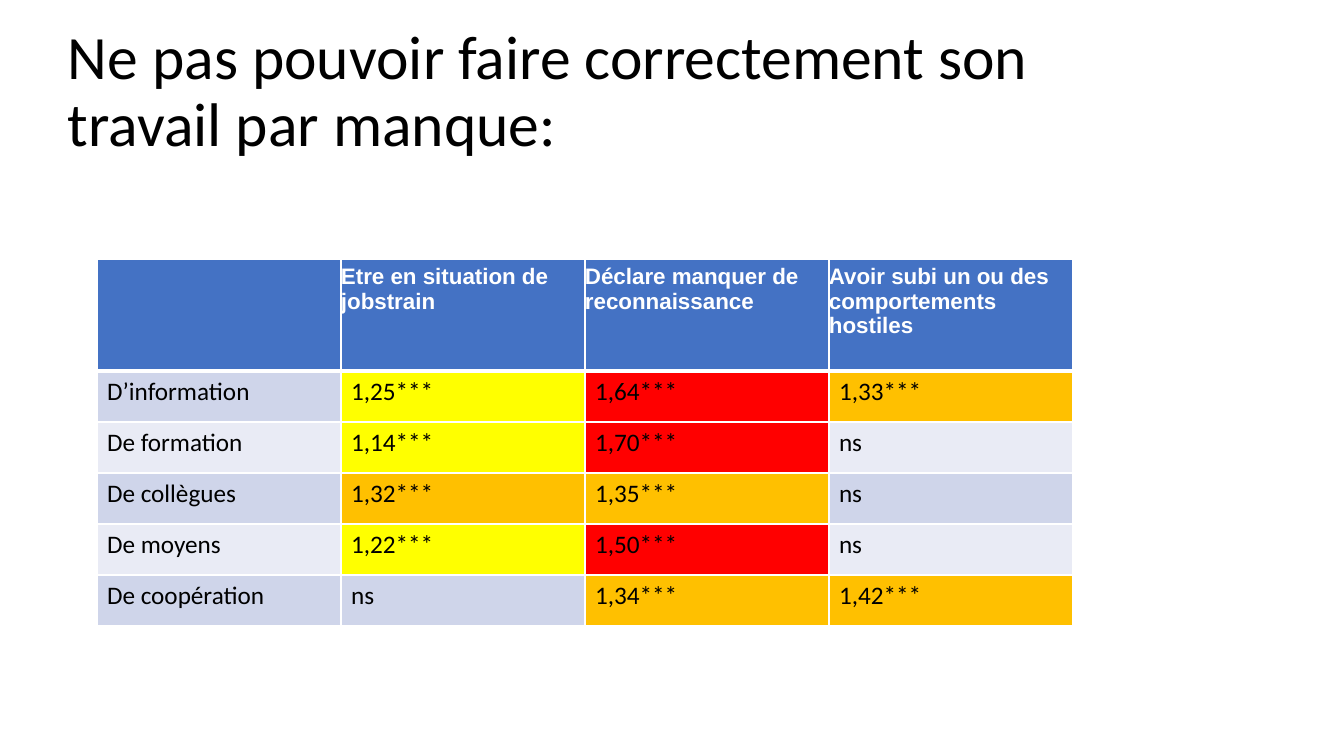
from lxml.etree import SubElement
from pptx import Presentation
from pptx.dml.color import RGBColor
from pptx.enum.text import MSO_ANCHOR
from pptx.oxml.ns import qn
from pptx.util import Emu, Pt

COLORS = {
    "head": "4472C4", "odd": "CFD5EA", "even": "E9EBF5",
    "low": "FFFF00", "mid": "FFC000", "high": "FF0000",
    "white": "FFFFFF", "black": "000000",
}
TITLE = "Ne pas pouvoir faire correctement son travail par manque:"
ROWS = [
    ["", "Etre en situation de jobstrain", "Déclare manquer de reconnaissance",
     "Avoir subi un ou des comportements hostiles"],
    ["D’information", "1,25***", "1,64***", "1,33***"],
    ["De formation", "1,14***", "1,70***", "ns"],
    ["De collègues", "1,32***", "1,35***", "ns"],
    ["De moyens", "1,22***", "1,50***", "ns"],
    ["De coopération", "ns", "1,34***", "1,42***"],
]
COL, HEAD, BODY = 244, 112, 51


def px(size):
    """Turn pixels into EMU."""
    return Emu(round(size * 12192000 / 1344))


def paint(name):
    """Return the named colour."""
    return RGBColor.from_string(COLORS[name])


def style(para, face, size, color, bold=False):
    """Set the font of a paragraph."""
    font = para.font
    font.name, font.size, font.bold = face, Pt(size), bold
    font.color.rgb = paint(color)


def add_title(slide, text):
    """Add the slide title."""
    box = slide.shapes.add_textbox(px(68), px(26), px(1013), px(134))
    frame = box.text_frame
    frame.word_wrap = True
    frame.vertical_anchor = MSO_ANCHOR.MIDDLE
    frame.margin_left = frame.margin_right = 0
    frame.margin_top = frame.margin_bottom = 0
    para = frame.paragraphs[0]
    para.text = text
    para.line_spacing = 0.9
    style(para, "Calibri", 44, "black")


def edge(cell, side, width):
    """Draw one white border of a cell."""
    props = cell._tc.get_or_add_tcPr()
    line = SubElement(props, qn("a:ln" + side), w=str(Pt(width)))
    fill = SubElement(line, qn("a:solidFill"))
    SubElement(fill, qn("a:srgbClr"), val=COLORS["white"])


def shade(text, row):
    """Pick a fill name from the ratio, or from the row band."""
    if row == 0:
        return "head"
    if not text.endswith("***"):
        return "odd" if row % 2 else "even"
    ratio = float(text.rstrip("*").replace(",", "."))
    return "low" if ratio < 1.3 else "mid" if ratio < 1.5 else "high"


def fill_cell(cell, text, row):
    """Write and style one cell."""
    widths = {"L": 1, "R": 1, "T": 3 if row == 1 else 1, "B": 3 if row == 0 else 1}
    for side, width in widths.items():
        edge(cell, side, width)
    cell.fill.solid()
    cell.fill.fore_color.rgb = paint(shade(text, row))
    cell.text = text
    para = cell.text_frame.paragraphs[0]
    if row == 0:
        cell.margin_left = cell.margin_right = 0
        style(para, "Arial", 16, "white", True)
    else:
        style(para, "Calibri", 18, "black")


def add_grid(slide, rows):
    """Add the table of ratios."""
    count, span = len(rows), len(rows[0])
    high = HEAD + BODY * (count - 1)
    table = slide.shapes.add_table(
        count, span, px(97), px(259), px(COL * span), px(high)).table
    table.horz_banding = False
    for col in table.columns:
        col.width = px(COL)
    for row, texts in enumerate(rows):
        table.rows[row].height = px(BODY if row else HEAD)
        for col, text in enumerate(texts):
            fill_cell(table.cell(row, col), text, row)


def main():
    """Build the slide and save it."""
    deck = Presentation()
    deck.slide_width, deck.slide_height = px(1344), px(756)
    slide = deck.slides.add_slide(deck.slide_layouts[6])
    add_title(slide, TITLE)
    add_grid(slide, ROWS)
    deck.save("out.pptx")


if __name__ == "__main__":
    main()
